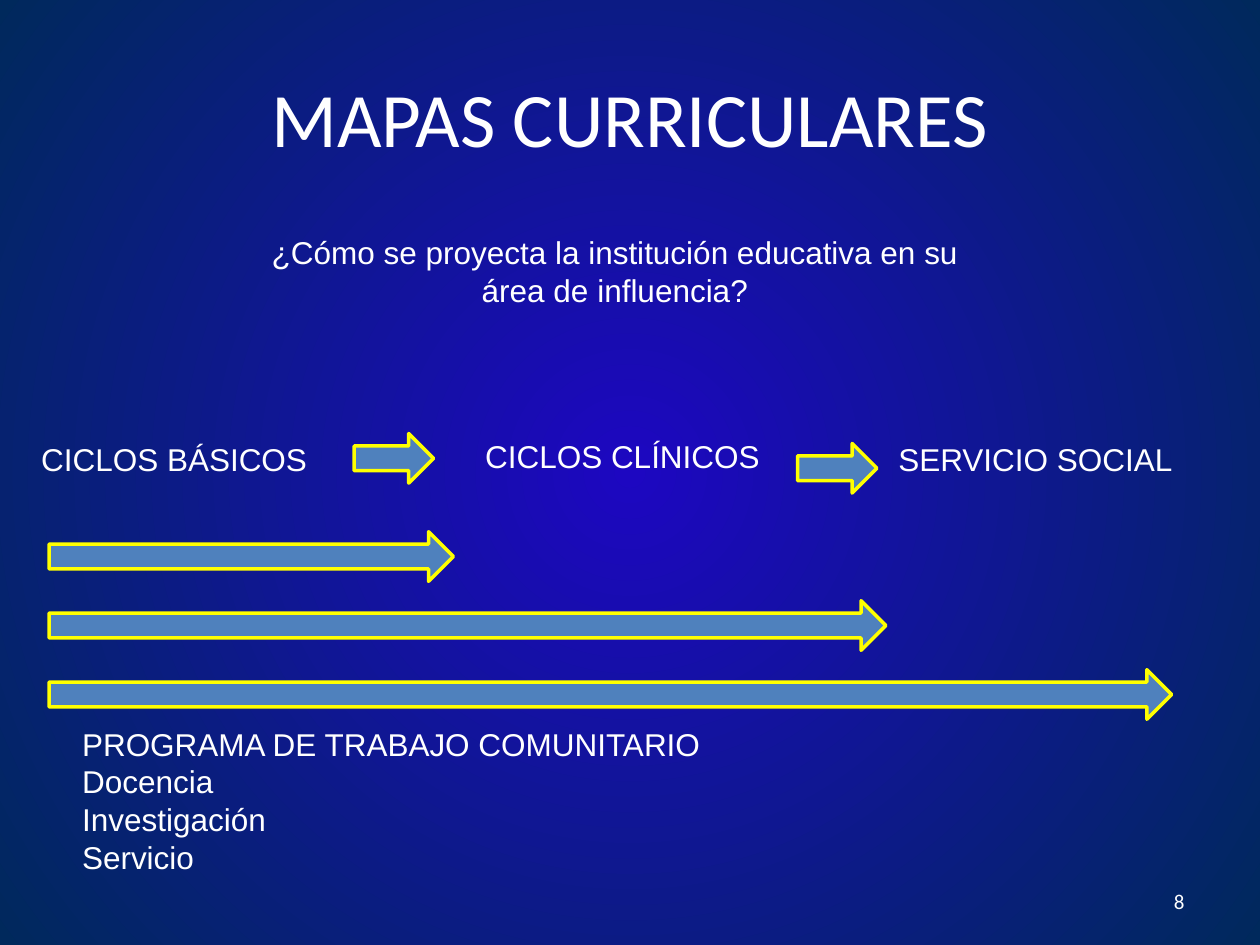
"""Build the curriculum map slide with its stages and progress arrows."""
import lxml.etree
import pptx
import pptx.dml.color
import pptx.enum.shapes
import pptx.enum.text
import pptx.oxml.ns
import pptx.util

Cm = pptx.util.Cm
Pt = pptx.util.Pt
ALIGN = pptx.enum.text.PP_ALIGN
ANCHOR = pptx.enum.text.MSO_ANCHOR
qn = pptx.oxml.ns.qn

THEME = {
    "center": "1D07C1", "edge": "00295C", "text": "FFFFFF",
    "arrow": "4F81BD", "outline": "FFFF00", "outline_width": 2,
    "heading_font": "Calibri", "body_font": "Arial",
    "title_size": 44, "body_size": 18, "number_size": 12,
}

TITLE = "MAPAS CURRICULARES"
QUESTION = "¿Cómo se proyecta la institución educativa en su área de influencia?"
PROGRAM = ["PROGRAMA DE TRABAJO COMUNITARIO", "Docencia", "Investigación", "Servicio"]
PAGE_NUMBER = "8"
STAGES = [
    ("CICLOS BÁSICOS", (0.58, 8.74, 6.76, 1.02)),
    ("CICLOS CLÍNICOS", (9.53, 8.69, 6.35, 1.02)),
    ("SERVICIO SOCIAL", (17.86, 8.74, 6.35, 1.02)),
]
STAGE_ARROWS = [(7.14, 8.74), (16.08, 8.94)]
STAGE_ARROW_WIDTH = 1.6
ARROW_HEIGHT = 1
REACH_LENGTHS = [8.15, 16.87, 22.63]
REACH_LEFT, REACH_TOP, REACH_STEP = 0.99, 10.72, 1.39


def color(name):
    return pptx.dml.color.RGBColor.from_string(THEME[name])


def place(box, left, top, width, height):
    box.left, box.top, box.width, box.height = map(Cm, (left, top, width, height))


def write_text(box, lines, *, font="body_font", size="body_size",
               align=ALIGN.LEFT, anchor=ANCHOR.TOP):
    frame = box.text_frame
    frame.word_wrap = True
    frame.auto_size = pptx.enum.text.MSO_AUTO_SIZE.NONE
    frame.vertical_anchor = anchor
    for index, line in enumerate(lines):
        para = frame.paragraphs[0] if index == 0 else frame.add_paragraph()
        para.alignment = align
        para.space_before = Pt(0)
        span = para.add_run()
        span.text = line
        span.font.name = THEME[font]
        span.font.size = Pt(THEME[size])
        span.font.color.rgb = color("text")


def add_text(page, lines, area, **style):
    box = page.shapes.add_textbox(*map(Cm, area))
    write_text(box, lines, **style)


def remove_bullets(box):
    for para in box.text_frame.paragraphs:
        properties = para._p.get_or_add_pPr()
        properties.set("marL", "0")
        properties.set("indent", "0")
        lxml.etree.SubElement(properties, qn("a:buNone"))


def add_arrow(page, left, top, width):
    arrow = page.shapes.add_shape(
        pptx.enum.shapes.MSO_SHAPE.RIGHT_ARROW,
        Cm(left), Cm(top), Cm(width), Cm(ARROW_HEIGHT))
    arrow.shadow.inherit = False
    arrow.fill.solid()
    arrow.fill.fore_color.rgb = color("arrow")
    arrow.line.color.rgb = color("outline")
    arrow.line.width = Pt(THEME["outline_width"])


def paint_background(page):
    fill = page.background.fill
    fill.gradient()
    for stop, name, position in zip(fill.gradient_stops, ("center", "edge"), (0, 1)):
        stop.color.rgb = color(name)
        stop.position = position
    gradient = page.element.find(".//" + qn("a:gradFill"))
    gradient.remove(gradient.find(qn("a:lin")))
    circle = lxml.etree.SubElement(gradient, qn("a:path"), {"path": "circle"})
    lxml.etree.SubElement(circle, qn("a:fillToRect"), dict.fromkeys("ltrb", "50000"))


def main():
    deck = pptx.Presentation()
    deck.slide_width, deck.slide_height = Cm(25.4), Cm(19.05)
    page = deck.slides.add_slide(deck.slide_layouts[1])
    paint_background(page)

    title, program = page.placeholders
    place(title, 1.27, 0.76, 22.86, 3.18)
    write_text(title, [TITLE], font="heading_font", size="title_size",
               align=ALIGN.CENTER, anchor=ANCHOR.MIDDLE)
    place(program, 1.4, 14.48, 20.24, 3.33)
    write_text(program, PROGRAM)
    remove_bullets(program)

    add_text(page, [QUESTION], (4.75, 4.57, 15.29, 1.8), align=ALIGN.CENTER)
    for label, area in STAGES:
        add_text(page, [label], area)
    for left, top in STAGE_ARROWS:
        add_arrow(page, left, top, STAGE_ARROW_WIDTH)
    for row, length in enumerate(REACH_LENGTHS):
        add_arrow(page, REACH_LEFT, REACH_TOP + row * REACH_STEP, length)
    add_text(page, [PAGE_NUMBER], (18.21, 17.65, 5.92, 1.02), font="heading_font",
             size="number_size", align=ALIGN.RIGHT, anchor=ANCHOR.MIDDLE)
    deck.save("out.pptx")


if __name__ == "__main__":
    main()
